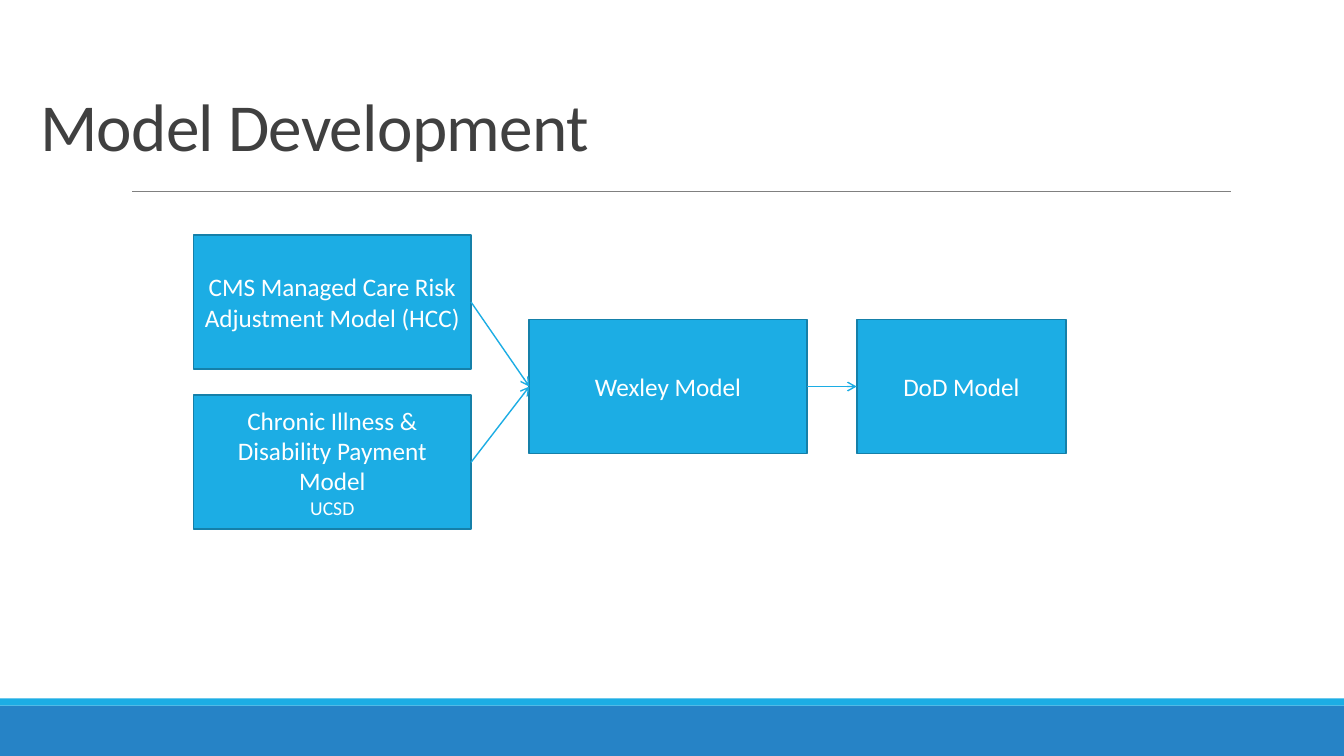
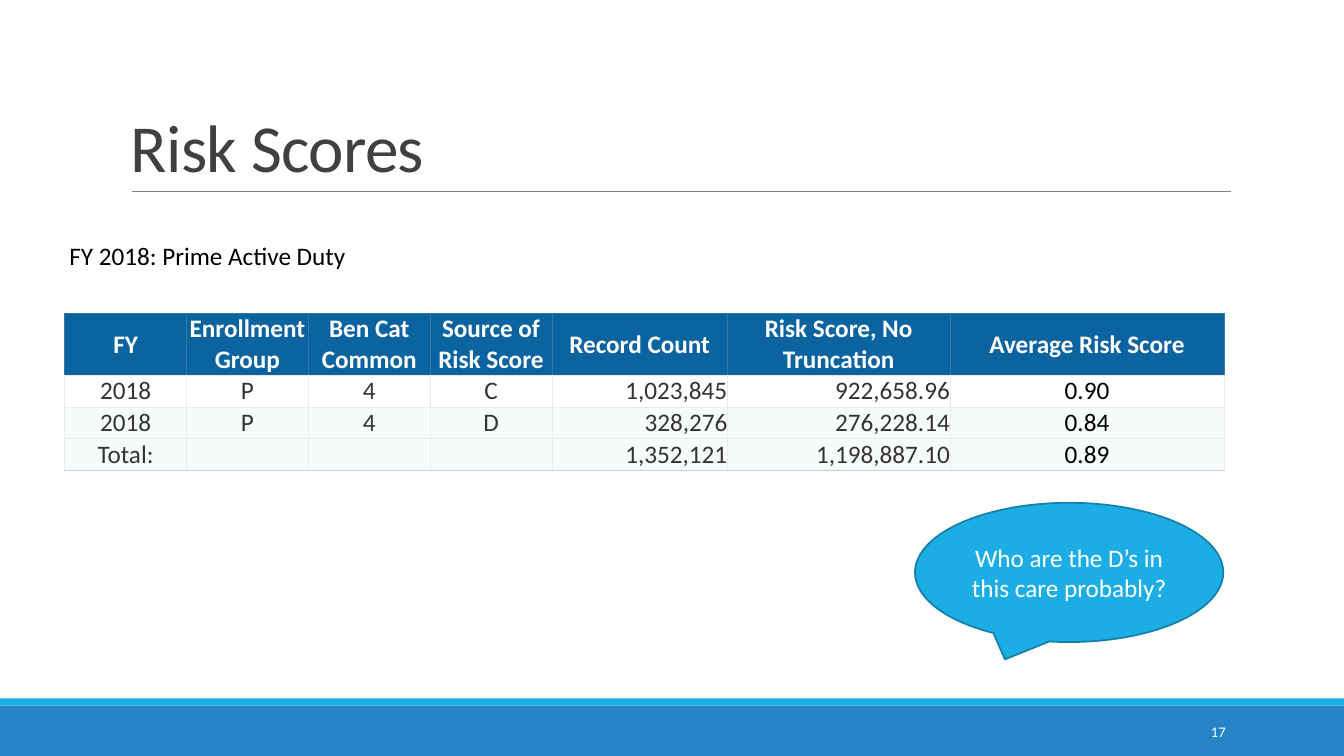
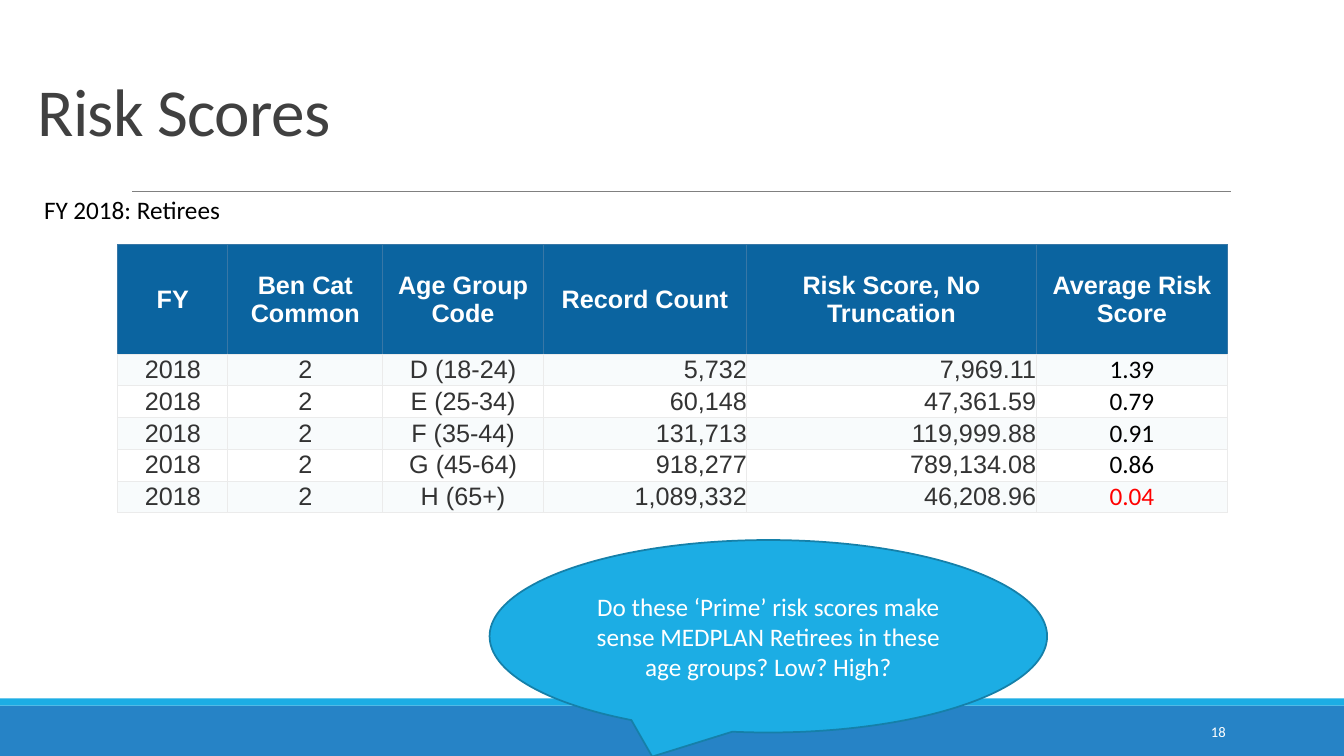
"""Build three slides on risk models and risk scores."""
from lxml import etree
from pptx import Presentation
from pptx.dml.color import RGBColor
from pptx.enum.shapes import MSO_CONNECTOR, MSO_SHAPE
from pptx.enum.text import MSO_ANCHOR, PP_ALIGN
from pptx.oxml.ns import qn
from pptx.util import Cm, Pt

LEFT, CENTER, RIGHT = PP_ALIGN.LEFT, PP_ALIGN.CENTER, PP_ALIGN.RIGHT
TOP, MIDDLE, BOTTOM = MSO_ANCHOR.TOP, MSO_ANCHOR.MIDDLE, MSO_ANCHOR.BOTTOM
RECT, CALLOUT = MSO_SHAPE.RECTANGLE, MSO_SHAPE.OVAL_CALLOUT
STRAIGHT = MSO_CONNECTOR.STRAIGHT

WHITE = RGBColor(0xFF, 0xFF, 0xFF)
BLACK = RGBColor(0, 0, 0)
RED = RGBColor(0xFF, 0, 0)
SKY = RGBColor(0x1C, 0xAD, 0xE4)
SKY_EDGE = RGBColor(0x15, 0x80, 0xA9)
BAND = RGBColor(0x26, 0x83, 0xC6)
RULE = RGBColor(0x80, 0x80, 0x80)
TITLE = RGBColor(0x40, 0x40, 0x40)
CELL_TEXT = RGBColor(0x33, 0x33, 0x33)
HEADER = RGBColor(0x0B, 0x64, 0xA0)
HEADER_EDGE = RGBColor(0x38, 0x77, 0xA6)
STRIPE = RGBColor(0xF8, 0xFB, 0xFC)
GRID = RGBColor(0xEB, 0xEB, 0xEB)
TABLE_END = RGBColor(0xCA, 0xC9, 0xD9)

WIDTH, HEIGHT = 33.87, 19.05
BOX_W, BOX_H = 6.99, 3.38
HEADER_ALIGN = CENTER

MODELS = {
    "hcc": ((4.88, 5.92, BOX_W, BOX_H), [("CMS Managed Care Risk Adjustment Model (HCC)", 18)]),
    "chronic": ((4.88, 9.96, BOX_W, BOX_H),
                [("Chronic Illness & Disability Payment Model", 18), ("UCSD", 14)]),
    "wexley": ((13.34, 8.05, BOX_W, BOX_H), [("Wexley Model", 18)]),
    "dod": ((21.59, 8.05, 5.28, BOX_H), [("DoD Model", 18)]),
}
FLOWS = [("hcc", "wexley"), ("chronic", "wexley"), ("wexley", "dod")]

SCORE_SLIDES = [
    {
        "title_at": (3.05, 0.79, 27.94, 4.04),
        "caption": "FY 2018: Prime Active Duty",
        "caption_at": (1.5, 5.92, 30.02, 1.02),
        "table_at": (1.63, 7.9),
        "widths": [3.07, 3.07, 3.07, 3.07, 4.42, 5.61, 6.91],
        "header_height": 1.56,
        "font": "Calibri",
        "aligns": [CENTER] * 4 + [RIGHT] * 2 + [CENTER],
        "fills": [WHITE, STRIPE, STRIPE],
        "end_line": TABLE_END,
        "rows": [
            ("FY", "Enrollment Group", "Ben Cat Common", "Source of Risk Score",
             "Record Count", "Risk Score, No Truncation", "Average Risk Score"),
            ("2018", "P", "4", "C", "1,023,845", "922,658.96", "0.90"),
            ("2018", "P", "4", "D", "328,276", "276,228.14", "0.84"),
            ("Total:", "", "", "", "1,352,121", "1,198,887.10", "0.89"),
        ],
        "alerts": [],
        "callout": "Who are the D’s in this care probably?",
        "callout_at": (23.06, 12.67, 7.77, 3.51),
        "number": "17",
    },
    {
        "title_at": (0.69, 0.23, 29.21, 3.68),
        "caption": "FY 2018: Retirees",
        "caption_at": (0.86, 4.78, 30.02, 1.02),
        "table_at": (2.97, 6.17),
        "widths": [2.77, 3.91, 4.04, 5.13, 7.29, 4.83],
        "header_height": 2.75,
        "font": "Arial",
        "aligns": [CENTER] * 3 + [RIGHT] * 2 + [CENTER],
        "fills": [STRIPE, WHITE, STRIPE, WHITE, STRIPE],
        "end_line": GRID,
        "rows": [
            ("FY", "Ben Cat Common", "Age Group Code", "Record Count",
             "Risk Score, No Truncation", "Average Risk Score"),
            ("2018", "2", "D (18-24)", "5,732", "7,969.11", "1.39"),
            ("2018", "2", "E (25-34)", "60,148", "47,361.59", "0.79"),
            ("2018", "2", "F (35-44)", "131,713", "119,999.88", "0.91"),
            ("2018", "2", "G (45-64)", "918,277", "789,134.08", "0.86"),
            ("2018", "2", "H (65+)", "1,089,332", "46,208.96", "0.04"),
        ],
        "alerts": ["0.04"],
        "callout": "Do these ‘Prime’ risk scores make sense MEDPLAN Retirees "
                   "in these age groups? Low? High?",
        "callout_at": (12.34, 13.61, 14.05, 4.85),
        "number": "18",
    },
]


def cm(values):
    return [Cm(v) for v in values]


def write(tf, text, size=18, color=BLACK, font="Calibri", bold=False,
          align=LEFT, anchor=TOP, spacing=None, tracking=None):
    tf.word_wrap = True
    tf.vertical_anchor = anchor
    lines = [(text, size)] if isinstance(text, str) else text
    for i, (line, points) in enumerate(lines):
        p = tf.add_paragraph() if i else tf.paragraphs[0]
        p.alignment = align
        if spacing:
            p.line_spacing = spacing
        r = p.add_run()
        r.text = line
        r.font.size, r.font.name, r.font.bold = Pt(points), font, bold
        r.font.color.rgb = color
        if tracking:
            r.font._element.set("spc", str(tracking))


def add_text(s, at, text, **fmt):
    write(s.shapes.add_textbox(*cm(at)).text_frame, text, **fmt)


def add_block(s, kind, at, fill, edge=None):
    sp = s.shapes.add_shape(kind, *cm(at))
    sp.shadow.inherit = False
    sp.fill.solid()
    sp.fill.fore_color.rgb = fill
    if edge:
        sp.line.color.rgb = edge
        sp.line.width = Pt(1.25)
    else:
        sp.line.fill.background()
    return sp


def add_bubble(s, kind, at, text):
    sp = add_block(s, kind, at, SKY, SKY_EDGE)
    write(sp.text_frame, text, color=WHITE, align=CENTER, anchor=MIDDLE)
    return sp


def add_line(s, ends, color, width, arrow=False):
    line = s.shapes.add_connector(STRAIGHT, *cm(ends))
    line.line.color.rgb = color
    line.line.width = Pt(width)
    if arrow:
        etree.SubElement(line.line._get_or_add_ln(), qn("a:tailEnd"), type="arrow")
    etree.SubElement(line._element.spPr, qn("a:effectLst"))
    return line


def add_slide(prs, title, title_at, number=None):
    s = prs.slides.add_slide(prs.slide_layouts[6])
    add_block(s, RECT, (0, 17.78, WIDTH, 1.27), BAND)
    add_block(s, RECT, (0, 17.6, WIDTH, 0.18), SKY)
    add_line(s, (3.33, 4.83, 31.01, 4.83), RULE, 0.5)
    add_text(s, title_at, title, size=48, color=TITLE, anchor=BOTTOM,
             spacing=0.85, tracking=-50)
    if number:
        add_text(s, (27.51, 17.93, 3.63, 1.02), number, size=10.5, color=WHITE,
                 align=RIGHT, anchor=MIDDLE)
    return s


def set_borders(cell, side, bottom):
    tc_pr = cell._tc.get_or_add_tcPr()
    for tag, color in (("lnL", side), ("lnR", side), ("lnT", side), ("lnB", bottom)):
        ln = etree.SubElement(tc_pr, qn(f"a:{tag}"), w=str(Pt(0.75)))
        fill = etree.SubElement(ln, qn("a:solidFill"))
        etree.SubElement(fill, qn("a:srgbClr"), val=str(color))


def add_score_table(s, spec):
    rows, widths = spec["rows"], spec["widths"]
    heights = [spec["header_height"]] + [0.8] * (len(rows) - 1)
    size = (sum(widths), sum(heights))
    table = s.shapes.add_table(len(rows), len(widths), *cm(spec["table_at"] + size)).table
    for column, width in zip(table.columns, widths):
        column.width = Cm(width)
    last_row, last_col = len(rows) - 1, len(widths) - 1
    for i, row in enumerate(rows):
        table.rows[i].height = Cm(heights[i])
        for j, text in enumerate(row):
            cell = table.cell(i, j)
            cell.margin_left = cell.margin_right = cell.margin_top = cell.margin_bottom = 0
            cell.vertical_anchor = MIDDLE
            set_borders(cell, GRID if i else HEADER_EDGE,
                        spec["end_line"] if i == last_row else GRID)
            cell.fill.solid()
            cell.fill.fore_color.rgb = spec["fills"][i - 1] if i else HEADER
            fmt = {"font": spec["font"], "align": spec["aligns"][j], "color": CELL_TEXT}
            if i == 0:
                fmt.update(color=WHITE, bold=True, align=HEADER_ALIGN)
            elif j == last_col:
                fmt.update(font="Calibri", color=RED if text in spec["alerts"] else BLACK)
            if text:
                write(cell.text_frame, text, anchor=None, **fmt)


def build_models(prs):
    s = add_slide(prs, "Model Development", (0.76, 0.25, 27.94, 4.04))
    boxes = {key: add_bubble(s, RECT, at, text) for key, (at, text) in MODELS.items()}
    for start, end in FLOWS:
        arrow = add_line(s, (0, 0, 0, 0), SKY, 1, arrow=True)
        arrow.begin_connect(boxes[start], 3)
        arrow.end_connect(boxes[end], 1)


def build_scores(prs, spec):
    s = add_slide(prs, "Risk Scores", spec["title_at"], spec["number"])
    add_score_table(s, spec)
    add_text(s, spec["caption_at"], spec["caption"])
    add_bubble(s, CALLOUT, spec["callout_at"], spec["callout"])


def main():
    prs = Presentation()
    prs.slide_width, prs.slide_height = Cm(WIDTH), Cm(HEIGHT)
    build_models(prs)
    for spec in SCORE_SLIDES:
        build_scores(prs, spec)
    prs.save("out.pptx")


if __name__ == "__main__":
    main()
